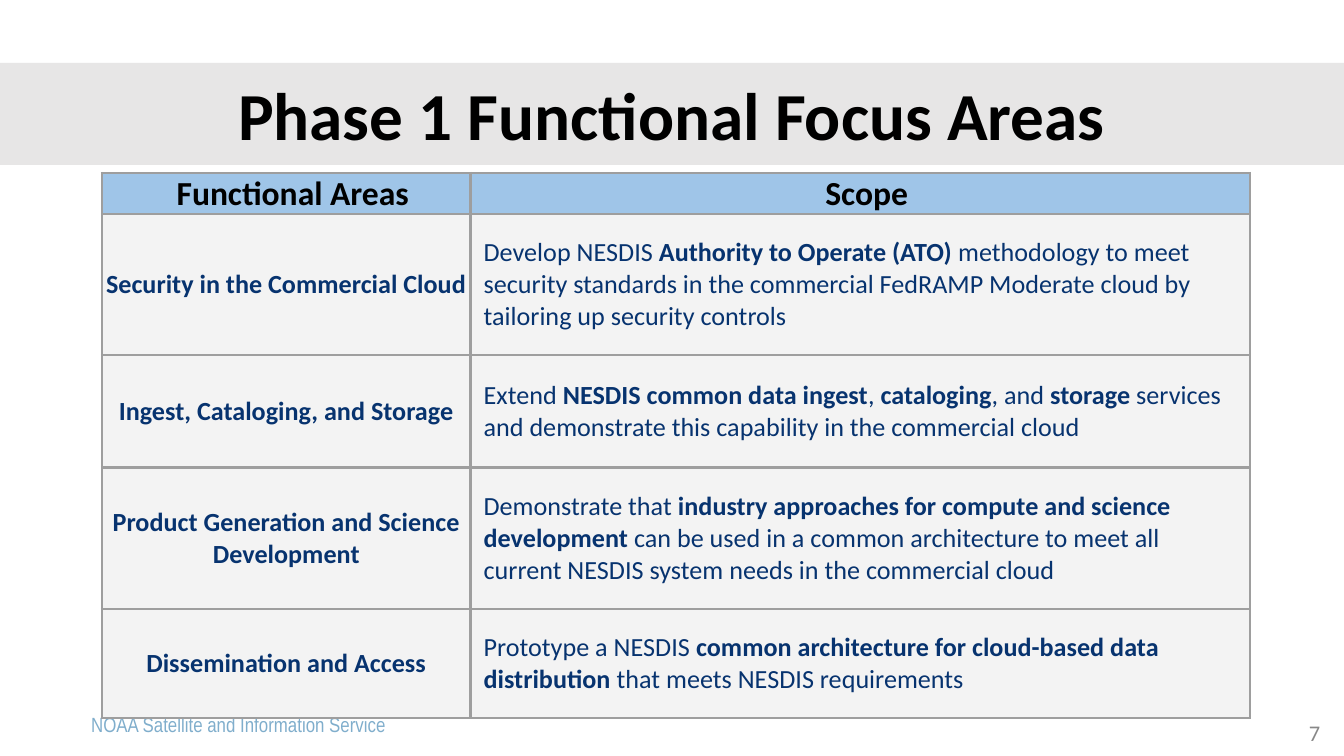
from lxml.etree import SubElement
from pptx import Presentation
from pptx.dml.color import RGBColor
from pptx.enum.shapes import MSO_SHAPE as Preset
from pptx.enum.text import MSO_ANCHOR as Anchor, PP_ALIGN as Align
from pptx.oxml.ns import qn
from pptx.util import Cm, Pt

COLORS = {
    "band": "E7E6E6",
    "header": "9FC5E8",
    "body": "F3F3F3",
    "border": "9E9E9E",
    "black": "000000",
    "navy": "07336F",
    "footer": "80AECC",
    "number": "888888",
}
COLUMN_WIDTHS = (6.96, 14.73)
ROW_HEIGHTS = (0.77, 2.67, 2.13, 2.67, 2.06)
ROWS = (
    ("*Functional Areas*", "*Scope*"),
    ("*Security in the Commercial Cloud*",
     "Develop NESDIS *Authority to Operate (ATO) *methodology to meet security "
     "standards in the commercial FedRAMP Moderate cloud by tailoring up security controls"),
    ("*Ingest, Cataloging, and Storage*",
     "Extend *NESDIS common data ingest*, *cataloging*, and *storage* services "
     "and demonstrate this capability in the commercial cloud"),
    ("*Product Generation and Science Development*",
     "Demonstrate that *industry approaches for compute and science development *can be "
     "used in a common architecture to meet all current NESDIS system needs in the commercial cloud"),
    ("*Dissemination and Access*",
     "Prototype a NESDIS *common architecture for cloud-based data distribution *"
     "that meets NESDIS requirements"),
)


class SlideBuilder:
    """Hold the style and the current slide, and add each kind of element."""

    def __init__(self, slide, font="Calibri"):
        self.slide = slide
        self.font = font

    def color(self, name):
        return RGBColor.from_string(COLORS[name])

    def fill(self, target, name):
        target.fill.solid()
        target.fill.fore_color.rgb = self.color(name)

    def add_runs(self, frame, text, size, color, align, font=None):
        frame.word_wrap = True
        paragraph = frame.paragraphs[0]
        paragraph.alignment = align
        for index, part in enumerate(text.split("*")):
            if part:
                run = paragraph.add_run()
                run.text = part
                run.font.name = font or self.font
                run.font.size = Pt(size)
                run.font.bold = index % 2 == 1
                run.font.color.rgb = self.color(color)

    def text(self, box, text, size, color, align, anchor=Anchor.TOP, font=None):
        shape = self.slide.shapes.add_textbox(*map(Cm, box))
        shape.text_frame.vertical_anchor = anchor
        self.add_runs(shape.text_frame, text, size, color, align, font)

    def title(self, box, text):
        shape = self.slide.shapes.add_shape(Preset.RECTANGLE, *map(Cm, box))
        shape.shadow.inherit = False
        shape.line.fill.background()
        self.fill(shape, "band")
        shape.text_frame.vertical_anchor = Anchor.MIDDLE
        self.add_runs(shape.text_frame, text, 36, "black", Align.CENTER)

    def borders(self, cell):
        properties = cell._tc.get_or_add_tcPr()
        for side in ("lnL", "lnR", "lnT", "lnB"):
            line = SubElement(properties, qn(f"a:{side}"), w=str(Pt(1.5)))
            solid = SubElement(line, qn("a:solidFill"))
            SubElement(solid, qn("a:srgbClr"), val=COLORS["border"])

    def cell(self, cell, text, is_header, is_scope):
        self.borders(cell)
        self.fill(cell, "header" if is_header else "body")
        cell.vertical_anchor = Anchor.MIDDLE
        cell.margin_top = cell.margin_bottom = 0
        cell.margin_left = Cm(0.25 if is_header or is_scope else 0)
        cell.margin_right = Cm(0.25 if is_scope and not is_header else 0)
        size, color = (18, "black") if is_header else (14, "navy")
        align = Align.LEFT if is_scope and not is_header else Align.CENTER
        self.add_runs(cell.text_frame, text, size, color, align)

    def table(self, left, top, rows, widths, heights):
        box = map(Cm, (left, top, sum(widths), sum(heights)))
        table = self.slide.shapes.add_table(len(rows), len(widths), *box).table
        for column, width in zip(table.columns, widths):
            column.width = Cm(width)
        for row, height in zip(table.rows, heights):
            row.height = Cm(height)
        for row_index, row in enumerate(rows):
            for column_index, text in enumerate(row):
                cell = table.cell(row_index, column_index)
                self.cell(cell, text, row_index == 0, column_index == 1)


def main():
    presentation = Presentation()
    presentation.slide_width = Cm(25.4)
    presentation.slide_height = Cm(14.29)
    slide = presentation.slides.add_slide(presentation.slide_layouts[6])
    builder = SlideBuilder(slide)
    builder.text((0.84, 13.34, 7.34, 0.76), "NOAA Satellite and Information Service",
                 11, "footer", Align.CENTER, font="Arial Narrow")
    builder.text((24.08, 13.46, 1.12, 0.76), "7", 12, "number", Align.RIGHT, Anchor.MIDDLE)
    builder.title((0, 1.19, 25.4, 1.93), "*Phase 1 Functional Focus Areas*")
    builder.table(1.93, 3.27, ROWS, COLUMN_WIDTHS, ROW_HEIGHTS)
    presentation.save("out.pptx")


if __name__ == "__main__":
    main()
